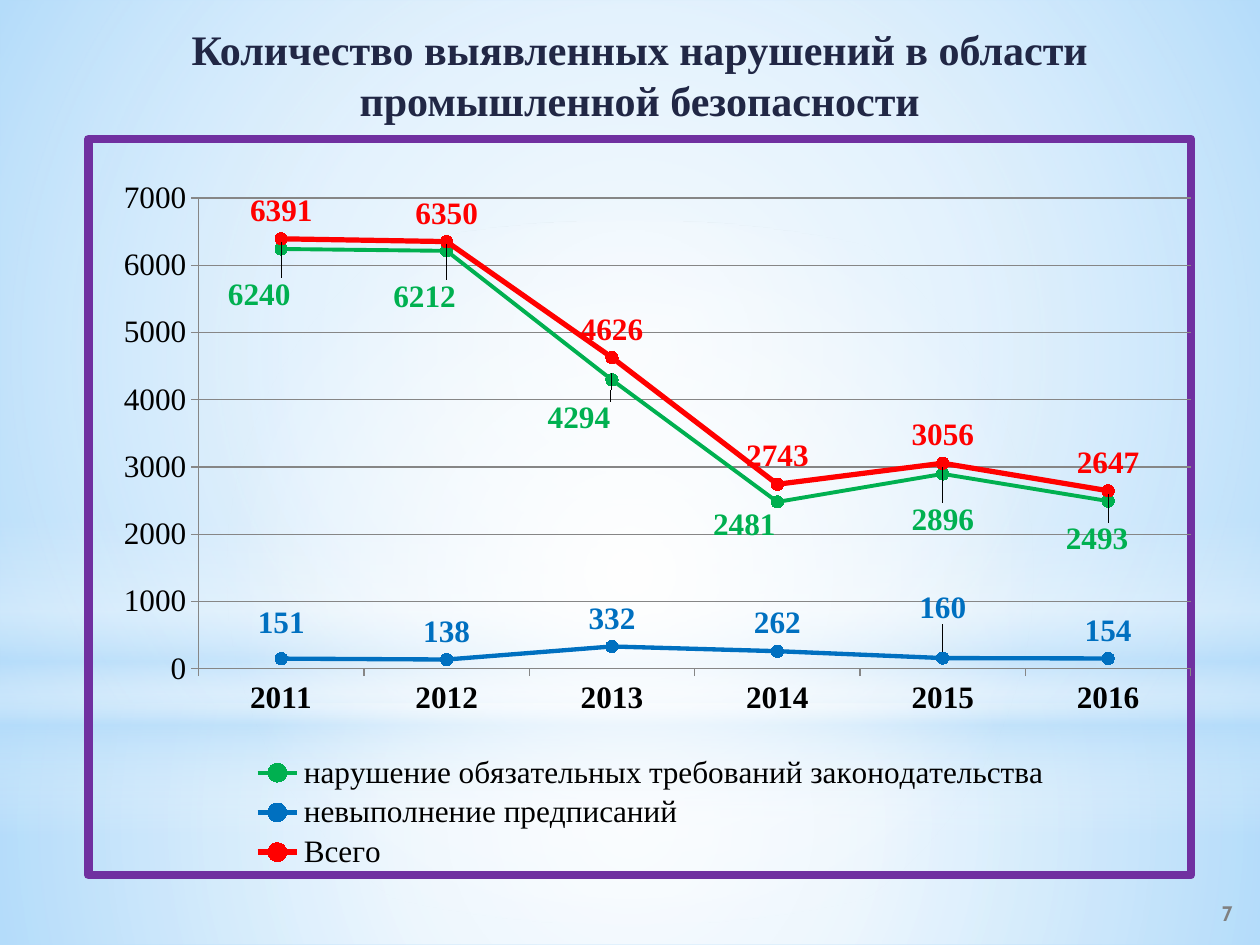
from lxml import etree
from pptx import Presentation
from pptx.chart import data as chart_data
from pptx.dml.color import RGBColor
from pptx.enum import chart as charts, shapes, text
from pptx.oxml import parse_xml
from pptx.oxml.ns import nsdecls, qn
from pptx.util import Pt

COLORS = {
    "sky": "B4DCFA", "white": "FFFFFF", "navy": "212745", "gray": "808080",
    "axis": "868686", "black": "000000", "frame": "7030A0",
    "green": "00B050", "blue": "0070C0", "red": "FF0000",
}
GLOWS = [
    ("RECTANGLE", (0, 402, 720, 138), [(0, "white", 91), (37, "white", 76), (100, "sky", 79)], None),
    ("RECTANGLE", (0, 0, 720, 402), [(0, "white", 89), (48, "white", 62), (100, "sky", 79)], None),
    ("RECTANGLE", (0, 297, 720, 180), [(0, "white", 0), (29, "white", 30), (45, "sky", 40),
                                       (55, "white", 26), (65, "sky", 60), (100, "white", 0)], 90),
    ("OVAL", (0, 126, 720, 402), [(0, "white", 100), (56, "white", 0)], None),
]
YEARS = ["2011", "2012", "2013", "2014", "2015", "2016"]
SERIES = [
    ("нарушение обязательных требований законодательства", (6240, 6212, 4294, 2481, 2896, 2493),
     "green", 2.25, {0: (-0.02, 0.1), 1: (-0.02, 0.1), 2: (-0.03, 0.09),
                     3: (-0.03, 0.07), 4: (0, 0.1), 5: (-0.01, 0.09)}),
    ("невыполнение предписаний", (151, 138, 332, 262, 160, 154),
     "blue", 2.5, {0: (0, -0.01), 4: (0, -0.03)}),
    ("Всего", (6391, 6350, 4626, 2743, 3056, 2647), "red", 3, {}),
]


class SlideBuilder:
    """Holds the style and the current slide, and draws each kind of element."""

    def __init__(self, slide, font_name):
        self.slide = slide
        self.font_name = font_name

    def color(self, name):
        return RGBColor.from_string(COLORS[name])

    def style_font(self, font, size, color, bold=False, name=None):
        font.name = name or self.font_name
        font.size = Pt(size)
        font.bold = bold
        font.color.rgb = self.color(color)

    def style_line(self, line, color, width):
        line.color.rgb = self.color(color)
        line.width = Pt(width)

    def background(self, color):
        fill = self.slide.background.fill
        fill.solid()
        fill.fore_color.rgb = self.color(color)

    def glow(self, kind, box, stops, angle):
        shape = self.slide.shapes.add_shape(shapes.MSO_SHAPE[kind], *map(Pt, box))
        shape.shadow.inherit = False
        shape.line.fill.background()
        shape.fill.background()
        stop_xml = "".join(
            f'<a:gs pos="{position * 1000}"><a:srgbClr val="{COLORS[color]}">'
            f'<a:alpha val="{opacity * 1000}"/></a:srgbClr></a:gs>'
            for position, color, opacity in stops)
        direction = (
            '<a:path path="circle"><a:fillToRect l="50000" t="50000" r="50000" b="50000"/></a:path>'
            if angle is None else f'<a:lin ang="{angle * 60000}" scaled="0"/>')
        gradient = parse_xml(f'<a:gradFill {nsdecls("a")} rotWithShape="1">'
                             f'<a:gsLst>{stop_xml}</a:gsLst>{direction}</a:gradFill>')
        properties = shape._element.spPr
        properties.replace(properties.find(qn("a:noFill")), gradient)

    def text(self, words, box, size, color, align, anchor, name=None):
        shape = self.slide.shapes.add_textbox(*map(Pt, box))
        frame = shape.text_frame
        frame.word_wrap = True
        frame.vertical_anchor = anchor
        paragraph = frame.paragraphs[0]
        paragraph.text = words
        paragraph.alignment = align
        self.style_font(paragraph.font, size, color, True, name)

    def manual_layout(self, x, y, width=None, height=None, inner=False):
        layout = etree.Element(qn("c:layout"))
        manual = etree.SubElement(layout, qn("c:manualLayout"))
        values = []
        if inner:
            values.append(("layoutTarget", "inner"))
        if width:
            values += [("xMode", "edge"), ("yMode", "edge")]
        values += [("x", x), ("y", y)]
        if width:
            values += [("w", width), ("h", height)]
        for tag, value in values:
            etree.SubElement(manual, qn(f"c:{tag}"), val=str(value))
        return layout

    def series(self, series, color, width, offsets):
        series.smooth = False
        self.style_line(series.format.line, color, width)
        marker = series.marker
        marker.style = charts.XL_MARKER_STYLE.CIRCLE
        marker.size = 7
        marker.format.fill.solid()
        marker.format.fill.fore_color.rgb = self.color(color)
        self.style_line(marker.format.line, color, 0.75)
        labels = series.data_labels
        labels.show_value = True
        labels.position = charts.XL_LABEL_POSITION.ABOVE
        self.style_font(labels.font, 18, color, True)
        for index, offset in offsets.items():
            label = series.points[index].data_label
            self.style_font(label.font, 18, color, True)
            label.position = charts.XL_LABEL_POSITION.ABOVE
            element = labels._element.xpath(f'c:dLbl[c:idx/@val="{index}"]')[0]
            element.find(qn("c:idx")).addnext(self.manual_layout(*offset))

    def chart(self, box, categories, rows):
        content = chart_data.CategoryChartData()
        content.categories = categories
        for name, values, *_ in rows:
            content.add_series(name, values)
        chart = self.slide.shapes.add_chart(
            charts.XL_CHART_TYPE.LINE_MARKERS, *map(Pt, box), content).chart
        self.style_font(chart.font, 18, "black")
        chart.has_title = False
        chart.plots[0].vary_by_categories = False
        for series, (_, _, color, width, offsets) in zip(chart.plots[0].series, rows):
            self.series(series, color, width, offsets)
        for axis in (chart.category_axis, chart.value_axis):
            axis.major_tick_mark = charts.XL_TICK_MARK.OUTSIDE
            self.style_line(axis.format.line, "axis", 0.75)
        self.style_font(chart.category_axis.tick_labels.font, 18, "black", True)
        chart.value_axis.minimum_scale = 0
        chart.value_axis.maximum_scale = 7000
        chart.value_axis.major_unit = 1000
        self.style_line(chart.value_axis.major_gridlines.format.line, "axis", 0.75)
        chart.has_legend = True
        legend = chart.legend
        legend.position = charts.XL_LEGEND_POSITION.BOTTOM
        legend.include_in_layout = False
        self.style_font(legend.font, 18, "black")
        for layout in legend._element.findall(qn("c:layout")):
            legend._element.remove(layout)
        legend._element.find(qn("c:legendPos")).addnext(self.manual_layout(0.14, 0.83, 0.74, 0.17))
        space = chart._chartSpace
        plot_area = space.chart.plotArea
        for layout in plot_area.findall(qn("c:layout")):
            plot_area.remove(layout)
        plot_area.insert(0, self.manual_layout(0.1, 0.08, 0.9, 0.64, inner=True))
        space.chart.addnext(parse_xml(
            f'<c:spPr {nsdecls("c", "a")}><a:noFill/><a:ln w="{Pt(5)}"><a:solidFill>'
            f'<a:srgbClr val="{COLORS["frame"]}"/></a:solidFill><a:round/></a:ln></c:spPr>'))


def main():
    presentation = Presentation()
    presentation.slide_width, presentation.slide_height = Pt(720), Pt(540)
    slide = presentation.slides.add_slide(presentation.slide_layouts[6])
    builder = SlideBuilder(slide, "Times New Roman")
    builder.background("sky")
    for glow in GLOWS:
        builder.glow(*glow)
    builder.text("Количество выявленных нарушений в области промышленной безопасности",
                 (31, 10, 669, 51), 24, "navy", text.PP_ALIGN.CENTER, text.MSO_ANCHOR.TOP)
    builder.chart((48, 77, 635, 425.5), YEARS, SERIES)
    builder.text("7", (567.4, 507.6, 144, 28.8), 12, "gray",
                 text.PP_ALIGN.RIGHT, text.MSO_ANCHOR.MIDDLE, "Cabin")
    presentation.save("out.pptx")


if __name__ == "__main__":
    main()
